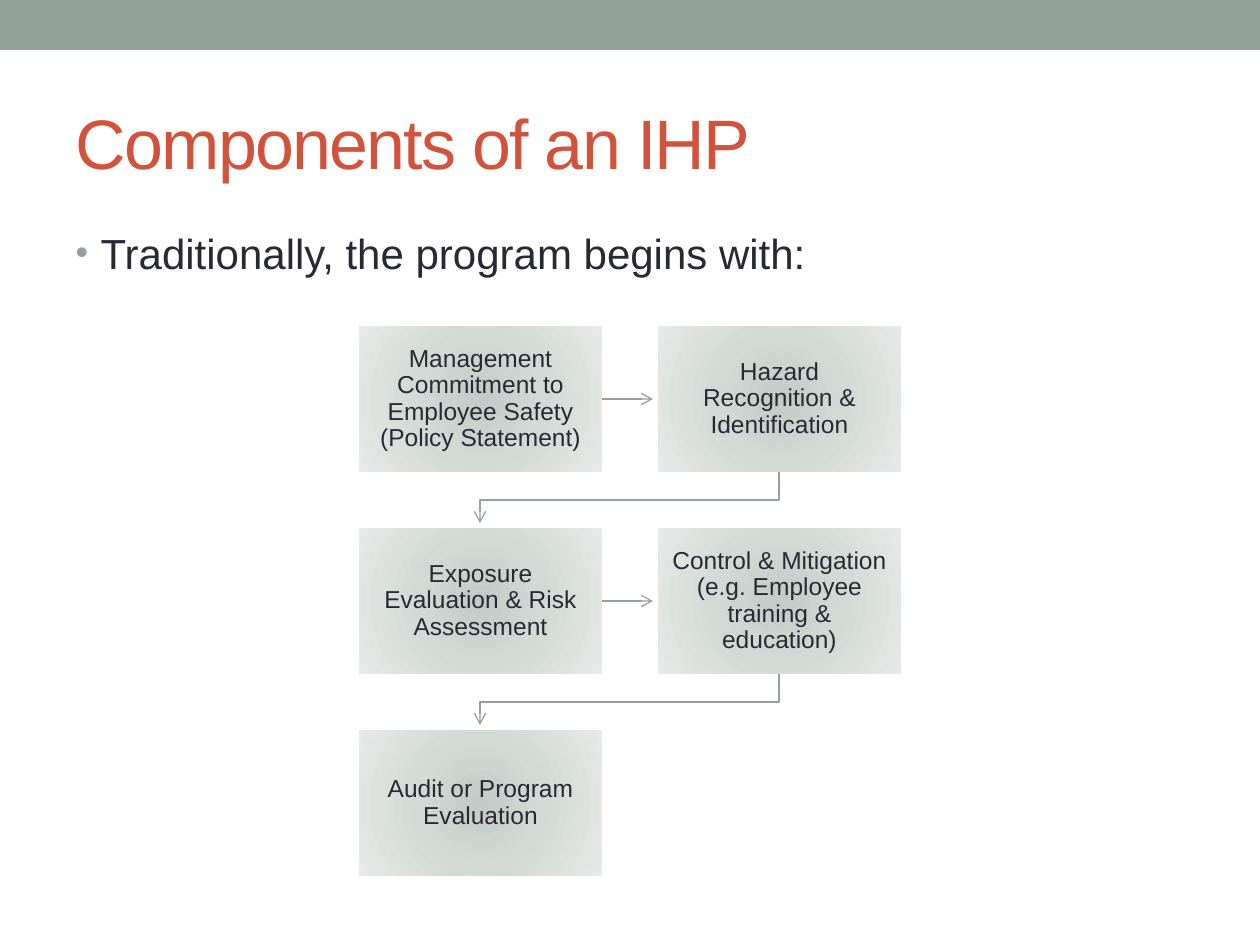
from lxml import etree
from pptx import Presentation
from pptx.dml.color import RGBColor
from pptx.enum.shapes import MSO_CONNECTOR as CONN, MSO_SHAPE as SHAPE
from pptx.enum.text import MSO_ANCHOR as ANCHOR, MSO_AUTO_SIZE as AUTO, PP_ALIGN as ALIGN
from pptx.oxml import parse_xml
from pptx.oxml.ns import nsdecls, qn
from pptx.util import Inches, Pt

SCALE = Inches(1) / 126
SAGE = RGBColor(0x93, 0xA2, 0x99)
RUST = RGBColor(0xD2, 0x53, 0x3C)
INK = RGBColor(0x29, 0x29, 0x34)
BOX_STOPS = (
    (0, RGBColor(0xC4, 0xCA, 0xC6)),
    (45, RGBColor(0xD3, 0xDA, 0xD6)),
    (100, RGBColor(0xE7, 0xEA, 0xE8)),
)

LEFT, TOP = 359, 326
BOX_W, BOX_H = 243, 146
STEP_X, STEP_Y = 299, 202
HEAD_GAP = 5
COLUMNS = 2
STEPS = (
    "Management Commitment to Employee Safety (Policy Statement)",
    "Hazard Recognition & Identification",
    "Exposure Evaluation & Risk Assessment",
    "Control & Mitigation (e.g. Employee training & education)",
    "Audit or Program Evaluation",
)


def px(n):
    return round(n * SCALE)


def place(sp, *box):
    sp.left, sp.top, sp.width, sp.height = map(px, box)


def write(tf, text, size, color, anchor=ANCHOR.TOP, align=ALIGN.LEFT, spacing=None,
          before=0, after=0, line=1.0, inset=None):
    """Fill a text frame with one formatted paragraph and return it."""
    tf.word_wrap = True
    tf.auto_size = AUTO.NONE
    tf.vertical_anchor = anchor
    if inset is not None:
        tf.margin_left = tf.margin_right = tf.margin_top = tf.margin_bottom = px(inset)
    p = tf.paragraphs[0]
    p.alignment, p.line_spacing = align, line
    p.space_before, p.space_after = Pt(before), Pt(after)
    r = p.add_run()
    r.text = text
    r.font.name, r.font.size, r.font.color.rgb = "Arial", Pt(size), color
    if spacing is not None:
        r.font._element.set("spc", str(spacing * 100))
    return p


def add_bullet(p, indent):
    pPr = p._p.get_or_add_pPr()
    pPr.set("marL", str(px(indent)))
    pPr.set("indent", str(-px(indent)))
    for xml in (
        f'<a:buClr {nsdecls("a")}><a:srgbClr val="{SAGE}"/></a:buClr>',
        f'<a:buSzPct {nsdecls("a")} val="85000"/>',
        f'<a:buFont {nsdecls("a")} typeface="Arial"/>',
        f'<a:buChar {nsdecls("a")} char="•"/>',
    ):
        pPr.append(parse_xml(xml))


def add_rect(s, *box):
    sp = s.shapes.add_shape(SHAPE.RECTANGLE, *map(px, box))
    sp.shadow.inherit = False
    sp.line.fill.background()
    return sp


def radial_fill(sp, stops):
    gs = "".join(f'<a:gs pos="{pos * 1000}"><a:srgbClr val="{rgb}"/></a:gs>'
                 for pos, rgb in stops)
    sp._element.spPr.find(qn("a:prstGeom")).addnext(parse_xml(
        f'<a:gradFill {nsdecls("a")} rotWithShape="1"><a:gsLst>{gs}</a:gsLst>'
        '<a:path path="circle"><a:fillToRect l="50000" t="50000" r="50000" b="50000"/>'
        '</a:path></a:gradFill>'))


def add_step(s, x, y, text):
    sp = add_rect(s, x, y, BOX_W, BOX_H)
    radial_fill(sp, BOX_STOPS)
    write(sp.text_frame, text, 14, INK, anchor=ANCHOR.MIDDLE, align=ALIGN.CENTER,
          after=5, line=0.9, inset=14)


def add_arrow(s, *points):
    """Draw a straight connector for two points, an angled open path for more."""
    pts = [(px(x), px(y)) for x, y in points]
    if len(pts) == 2:
        sp = s.shapes.add_connector(CONN.STRAIGHT, *pts[0], *pts[1])
        etree.SubElement(sp._element.spPr, qn("a:effectLst"))
    else:
        fb = s.shapes.build_freeform(*pts[0], scale=1.0)
        fb.add_line_segments(pts[1:], close=False)
        sp = fb.convert_to_shape()
        sp.fill.background()
        sp.shadow.inherit = False
    sp.line.color.rgb, sp.line.width = SAGE, Pt(0.75)
    etree.SubElement(sp.line._get_or_add_ln(), qn("a:tailEnd"), type="arrow")


def add_flow(s):
    spots = [(LEFT + i % COLUMNS * STEP_X, TOP + i // COLUMNS * STEP_Y)
             for i in range(len(STEPS))]
    for (x, y), (next_x, next_y) in zip(spots, spots[1:]):
        if y == next_y:
            mid = y + BOX_H // 2
            add_arrow(s, (x + BOX_W, mid), (next_x - HEAD_GAP, mid))
        else:
            start, end = x + BOX_W // 2, next_x + BOX_W // 2
            bend = (y + BOX_H + next_y) // 2
            add_arrow(s, (start, y + BOX_H), (start, bend), (end, bend),
                      (end, next_y - HEAD_GAP))
    for (x, y), text in zip(spots, STEPS):
        add_step(s, x, y, text)


def main():
    prs = Presentation()
    prs.slide_width, prs.slide_height = px(1260), px(945)
    s = prs.slides.add_slide(prs.slide_layouts[1])
    title, body = s.placeholders

    bar = add_rect(s, 0, 0, 1260, 50)
    bar.fill.solid()
    bar.fill.fore_color.rgb = SAGE

    place(title, 63, 73, 1134, 136)
    write(title.text_frame, "Components of an IHP", 40, RUST,
          anchor=ANCHOR.MIDDLE, spacing=-1)
    place(body, 63, 221, 1134, 670)
    p = write(body.text_frame, "Traditionally, the program begins with:", 24, INK, before=5)
    add_bullet(p, 25)

    add_flow(s)
    prs.save("out.pptx")


if __name__ == "__main__":
    main()
